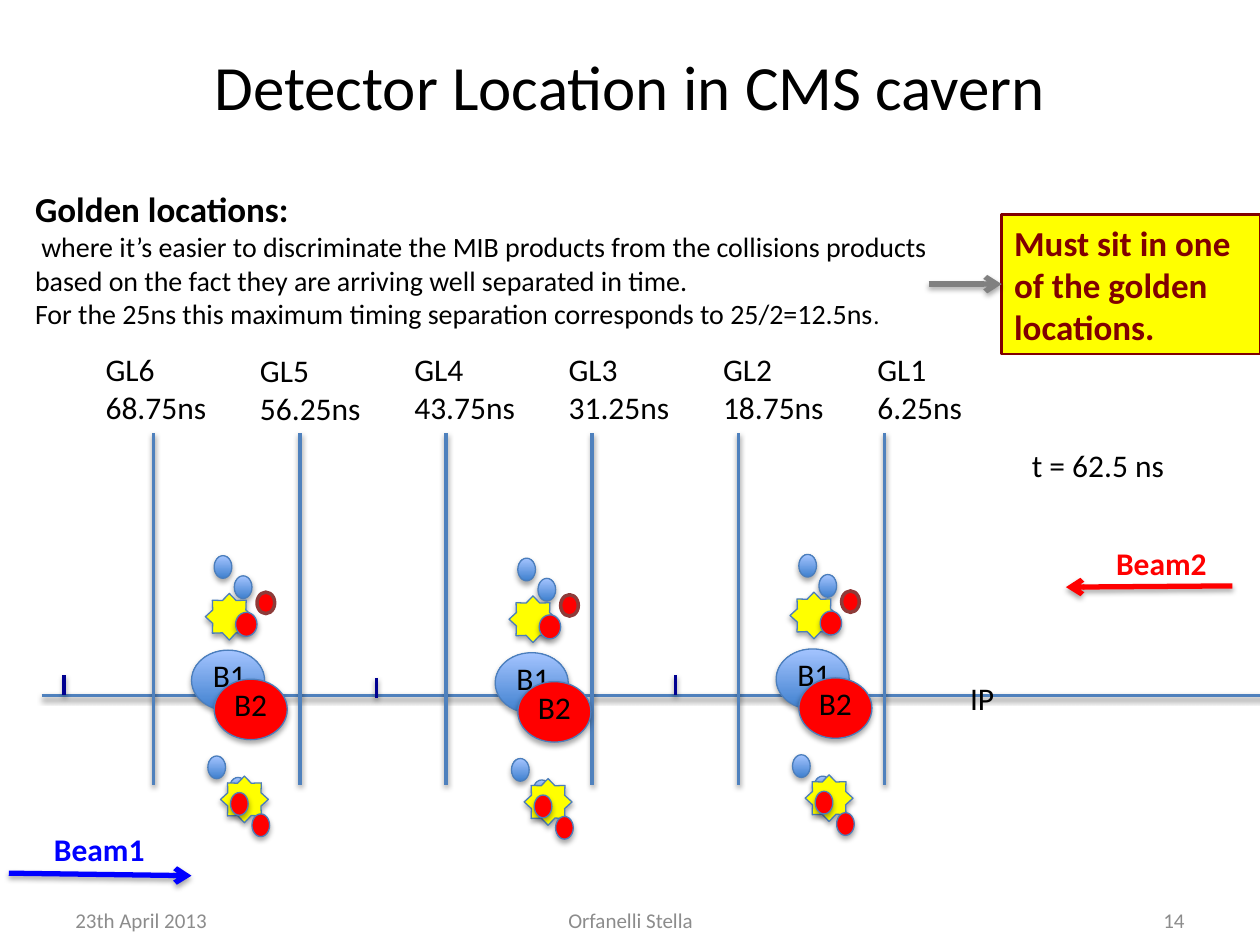
from lxml import etree
from pptx import Presentation
from pptx.dml.color import RGBColor
from pptx.enum.shapes import MSO_CONNECTOR, MSO_SHAPE
from pptx.enum.text import MSO_ANCHOR, PP_ALIGN
from pptx.oxml.ns import qn
from pptx.util import Inches, Pt

STRAIGHT = MSO_CONNECTOR.STRAIGHT
OVAL, STAR, RECT = MSO_SHAPE.OVAL, MSO_SHAPE.STAR_8_POINT, MSO_SHAPE.RECTANGLE
LEFT, CENTER, RIGHT = PP_ALIGN.LEFT, PP_ALIGN.CENTER, PP_ALIGN.RIGHT
TOP, MIDDLE = MSO_ANCHOR.TOP, MSO_ANCHOR.MIDDLE
FONT = "Calibri"
BLUE, RED, YELLOW, NAVY, EDGE = "4F81BD", "FF0000", "FFFF00", "000090", "4B7EBC"
BLACK, GREY, MAROON = "000000", "8C8C8C", "800000"


def rgb(code):
    """Turn a hex string into a colour."""
    return RGBColor.from_string(code)


def style(par, size, color=BLACK, bold=False, align=LEFT):
    """Format one paragraph."""
    par.alignment = align
    par.font.name, par.font.size, par.font.bold = FONT, Pt(size), bold
    par.font.color.rgb = rgb(color)


def shade(shape, alpha=35, dist=1.8):
    """Give a shape or line a soft shadow straight below it."""
    props = shape._element.spPr
    effects = etree.SubElement(props, qn("a:effectLst"))
    outer = etree.SubElement(effects, qn("a:outerShdw"), blurRad=str(Pt(3.1)),
                             dist=str(Pt(dist)), dir="5400000", rotWithShape="0")
    tint = etree.SubElement(outer, qn("a:srgbClr"), val=BLACK)
    etree.SubElement(tint, qn("a:alpha"), val=str(alpha * 1000))


def text(shapes, box, lines, size=18, color=BLACK, bold=False, align=LEFT, anchor=TOP):
    """Place a text box with one paragraph for each line."""
    frame = shapes.add_textbox(*map(Inches, box)).text_frame
    frame.word_wrap, frame.vertical_anchor = True, anchor
    frame.text = "\n".join(lines)
    for par in frame.paragraphs:
        style(par, size, color, bold, align)
    return frame


def line(shapes, start, end, color=BLUE, width=2, arrow=False):
    """Draw a straight line, with an arrowhead at its end if asked."""
    wire = shapes.add_connector(STRAIGHT, *map(Inches, start + end))
    wire.line.color.rgb, wire.line.width = rgb(color), Pt(width)
    if arrow:
        etree.SubElement(wire.line._get_or_add_ln(), qn("a:tailEnd"), type="arrow")
        shade(wire)
    else:
        shade(wire, 38, 1.6)
    return wire


def solid(shapes, kind, box, fill, edge=EDGE, width=0.75):
    """Add a shape with an outline and either a plain or blue graded fill."""
    shape = shapes.add_shape(kind, *map(Inches, box))
    if fill == BLUE:
        shape.fill.gradient()
        shape.fill.gradient_angle = 90
        for stop, code in zip(shape.fill.gradient_stops, ("3F80CE", "A4C4FF")):
            stop.color.rgb = rgb(code)
    else:
        shape.fill.solid()
        shape.fill.fore_color.rgb = rgb(fill)
    shape.line.color.rgb, shape.line.width = rgb(edge), Pt(width)
    if edge == EDGE:
        shade(shape)
    else:
        shape.shadow.inherit = False
    return shape


def bunch(shapes, left, top):
    """Draw one crossing of the two beams with its products."""
    parts = shapes.add_group_shape().shapes

    def put(kind, fill, size, *spots):
        for dx, dy in spots:
            solid(parts, kind, (left + dx, top + dy) + size, fill)

    def name(dx, dy, label):
        text(parts, (left + dx, top + dy, 0.52, 0.4), [label])

    large, small = (0.58, 0.48), (0.14, 0.18)
    put(OVAL, BLUE, large, (0, 0))
    name(0.07, 0, "B1")
    put(OVAL, BLUE, small, (0.13, 0.84), (0.3, 1.01), (0.18, -0.75), (0.34, -0.59))
    put(STAR, YELLOW, (0.38, 0.37), (0.11, -0.45), (0.23, 1))
    put(OVAL, RED, large, (0.18, 0.23))
    name(0.24, 0.23, "B2")
    put(OVAL, RED, small, (0.31, 1.13), (0.48, 1.3))
    put(OVAL, RED, (0.17, 0.19), (0.35, -0.3))
    solid(parts, OVAL, (left + 0.52, top - 0.46, 0.14, 0.17), RED, "8E3B39", 2)


def axis(shapes, left, top):
    """Draw the beam line with its golden locations and ticks."""
    line(shapes, (left, top), (left + 10.33, top))
    times = ("68.75", "56.25", "43.75", "31.25", "18.75", "6.25")
    for i, time in enumerate(times):
        x = left + 0.89 + 1.16 * i
        line(shapes, (x, top - 2.08), (x, top + 0.71))
        box = (left + 0.41 + 1.225 * i, top - 2.79 + 0.01 * (i == 1), 1.23, 0.71)
        text(shapes, box, [f"GL{6 - i}", f"{time}ns"])
    for dx, dy in ((0.18, 0), (1.44, 0), (2.66, 0.02), (3.81, 0.02), (5.03, 0), (6.12, 0)):
        line(shapes, (left + dx, top - 0.16 + dy), (left + dx, top + dy), NAVY)
    text(shapes, (left + 7.27, top - 0.18, 0.49, 0.4), ["IP"])


def beam(shapes, box, label, color, start, end):
    """Place a beam's name and its arrow together."""
    parts = shapes.add_group_shape().shapes
    line(parts, start, end, color, 3, True)
    text(parts, box, [label], color=color, bold=True)


def intro(shapes, left, top):
    """Explain the golden locations and point to the conclusion."""
    frame = text(shapes, (left, top, 7.33, 1.25), [
        "Golden locations:",
        " where it’s easier to discriminate the MIB products from the collisions products "
        "based on the fact they are arriving well separated in time.",
        "For the 25ns this maximum timing separation corresponds to 25/2=12.5ns"], 16)
    style(frame.paragraphs[0], 20, bold=True)
    stop = frame.paragraphs[2].add_run()
    stop.text, stop.font.size = ".", Pt(14)
    note = solid(shapes, RECT, (left + 7.77, top + 0.26, 2.05, 1.11), YELLOW, MAROON, 1.5)
    note.text_frame.word_wrap = True
    note.text_frame.text = "Must sit in one of the golden locations."
    style(note.text_frame.paragraphs[0], 20, MAROON, True)
    y = top + 0.815
    wire = line(shapes, (left + 7.19, y), (left + 7.77, y), "808080", 3, True)
    wire.end_connect(note, 1)


def footer(shapes, top):
    """Place the date, the author and the page number."""
    for left, width, label, align in ((0.5, 2.33, "23th April 2013", LEFT),
                                      (3.42, 3.17, "Orfanelli Stella", CENTER),
                                      (7.17, 2.33, "14", RIGHT)):
        text(shapes, (left, top, width, 0.4), [label], 12, GREY, False, align, MIDDLE)


def heading(title, box):
    """Fill and move the title placeholder."""
    title.left, title.top, title.width, title.height = map(Inches, box)
    title.text_frame.text = "Detector Location in CMS cavern"
    title.text_frame.vertical_anchor = MIDDLE
    style(title.text_frame.paragraphs[0], 36, align=CENTER)


def main():
    """Build the slide and save it."""
    deck = Presentation()
    deck.slide_width, deck.slide_height = Inches(10), Inches(7.5)
    shapes = deck.slides.add_slide(deck.slide_layouts[5]).shapes
    heading(shapes.title, (1.29, 0, 7.42, 1.35))
    axis(shapes, 0.33, 5.52)
    text(shapes, (8.09, 3.49, 1.41, 0.4), ["t = 62.5 ns"])
    beam(shapes, (8.76, 4.27, 1.24, 0.4), "Beam2", RED, (9.78, 4.65), (8.46, 4.66))
    beam(shapes, (0.33, 6.54, 1.2, 0.4), "Beam1", "0000FF", (0.07, 6.93), (1.52, 6.95))
    for left, top in ((6.16, 5.15), (3.93, 5.18), (1.52, 5.16)):
        bunch(shapes, left, top)
    intro(shapes, 0.18, 1.44)
    footer(shapes, 7.1)
    deck.save("out.pptx")


if __name__ == "__main__":
    main()
